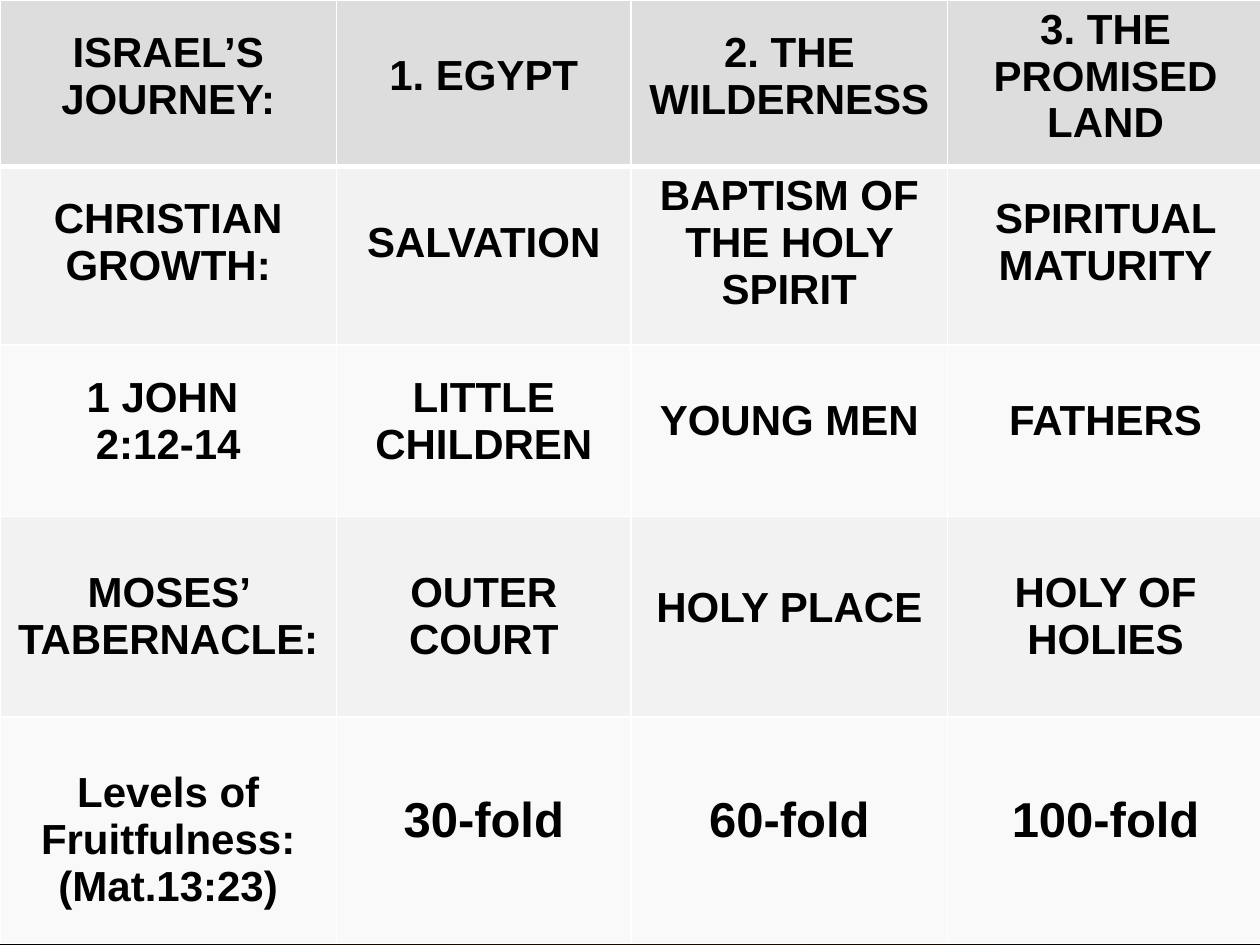
from lxml.etree import SubElement
from pptx import Presentation
from pptx.dml.color import RGBColor
from pptx.enum.text import MSO_ANCHOR, PP_ALIGN
from pptx.oxml import parse_xml
from pptx.oxml.ns import nsdecls, qn
from pptx.util import Inches, Pt

COLORS = {
    "header": "DDDDDD",
    "dark_band": "F2F2F2",
    "light_band": "F9F9F9",
    "border": "FFFFFF",
    "text": "000000",
    "glow": "321900",
    "edge": "000000",
}
COLUMN_WIDTHS = [2.67, 2.34, 2.51, 2.51]
ROW_HEIGHTS = [1.32, 1.42, 1.36, 1.59, 1.8]
LINE_HEIGHT = 0.0154  # inches of line height for each point of text

# Each cell: its text, and the size in points of the line left free above it
ROWS = [
    [("ISRAEL’S JOURNEY:", 12), ("1. EGYPT", 24),
     ("2. THE WILDERNESS", 12), ("3. THE PROMISED LAND", 0)],
    [("CHRISTIAN\nGROWTH:", 12), ("SALVATION", 24),
     ("BAPTISM OF THE HOLY SPIRIT", 0), ("SPIRITUAL MATURITY", 12)],
    [("1 JOHN \n2:12-14", 12), ("LITTLE CHILDREN", 12),
     ("YOUNG MEN", 24), ("FATHERS", 24)],
    [("MOSES’ TABERNACLE:", 24), ("OUTER COURT", 24),
     ("HOLY PLACE", 32), ("HOLY OF HOLIES", 24)],
    [("Levels of Fruitfulness:\n(Mat.13:23)", 24), ("30-fold", 36),
     ("60-fold", 36), ("100-fold", 36)],
]


def set_background(slide):
    """Fill the background with a gradient that darkens from the centre."""
    fill = slide.background.fill
    fill.gradient()
    for stop, name in zip(fill.gradient_stops, ("glow", "edge")):
        stop.color.rgb = RGBColor.from_string(COLORS[name])
    first_stop, last_stop = fill.gradient_stops
    first_stop.position, last_stop.position = 0, 1
    gradient = slide.element.find(".//" + qn("a:gradFill"))
    glow = gradient.find(".//" + qn("a:srgbClr"))
    SubElement(glow, qn("a:alpha"), val="79000")
    linear = gradient.find(qn("a:lin"))
    gradient.replace(linear, parse_xml(
        f'<a:path {nsdecls("a")} path="circle">'
        '<a:fillToRect l="50000" t="50000" r="50000" b="50000"/></a:path>'))


def set_borders(cell, top=1, bottom=1):
    properties = cell._tc.get_or_add_tcPr()
    for side, width in (("L", 1), ("R", 1), ("T", top), ("B", bottom)):
        properties.append(parse_xml(
            f'<a:ln{side} {nsdecls("a")} w="{Pt(width)}"><a:solidFill>'
            f'<a:srgbClr val="{COLORS["border"]}"/></a:solidFill></a:ln{side}>'))


def write_text(cell, text, size=24, space_above=0):
    cell.vertical_anchor = MSO_ANCHOR.TOP
    cell.margin_top = Inches(0.05 + space_above * LINE_HEIGHT)
    cell.text_frame.text = text
    for paragraph in cell.text_frame.paragraphs:
        paragraph.alignment = PP_ALIGN.CENTER
        font = paragraph.runs[0].font
        font.name = "Arial"
        font.size = Pt(size)
        font.bold = True
        font.color.rgb = RGBColor.from_string(COLORS["text"])


def band_color(row_index):
    if row_index == 0:
        return COLORS["header"]
    return COLORS["dark_band" if row_index % 2 else "light_band"]


def add_journey_table(slide):
    table = slide.shapes.add_table(
        len(ROW_HEIGHTS), len(COLUMN_WIDTHS), 0, 0,
        Inches(sum(COLUMN_WIDTHS)), Inches(sum(ROW_HEIGHTS))).table
    for column, width in zip(table.columns, COLUMN_WIDTHS):
        column.width = Inches(width)
    for row, height in zip(table.rows, ROW_HEIGHTS):
        row.height = Inches(height)

    for row_index, row in enumerate(ROWS):
        for column_index, (text, space_above) in enumerate(row):
            cell = table.cell(row_index, column_index)
            set_borders(cell, top=3 if row_index == 1 else 1,
                        bottom=3 if row_index == 0 else 1)
            cell.fill.solid()
            cell.fill.fore_color.rgb = RGBColor.from_string(band_color(row_index))
            write_text(cell, text, size=28 if text.endswith("-fold") else 24,
                       space_above=space_above)


def main():
    presentation = Presentation()
    presentation.slide_width = Inches(10)
    presentation.slide_height = Inches(7.5)
    slide = presentation.slides.add_slide(presentation.slide_layouts[6])
    set_background(slide)
    add_journey_table(slide)
    presentation.save("out.pptx")


if __name__ == "__main__":
    main()
